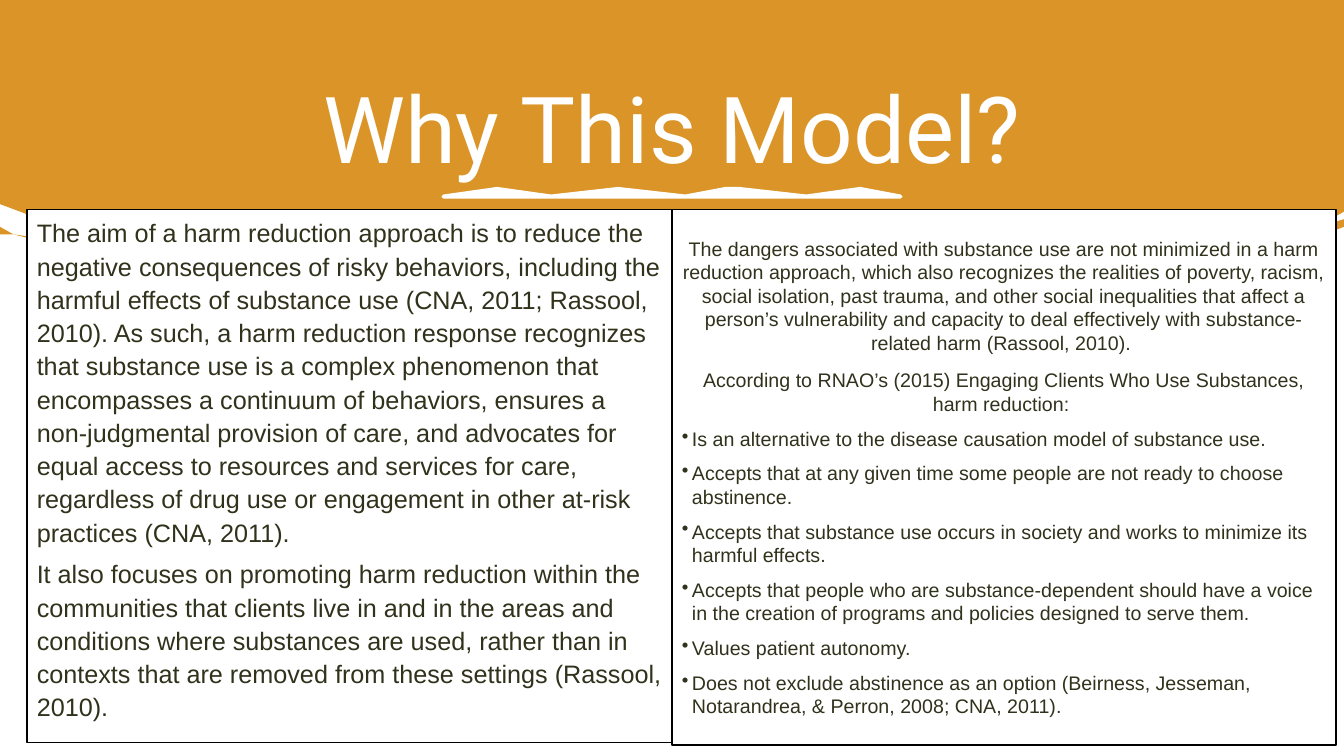
import pptx
import pptx.dml.color
import pptx.enum.shapes
import pptx.enum.text
import pptx.oxml.ns
import pptx.util
from dataclasses import dataclass
from lxml import etree

ALIGN = pptx.enum.text.PP_ALIGN
ANCHOR = pptx.enum.text.MSO_ANCHOR
RECTANGLE = pptx.enum.shapes.MSO_SHAPE.RECTANGLE
Pt = pptx.util.Pt


@dataclass(frozen=True)
class Theme:
    paper: str = "FFFFFF"
    banner: str = "DA9427"
    ink: str = "31321C"
    border: str = "000000"
    heading_font: str = "Roboto"
    body_font: str = "Arial"
    heading_size: int = 66
    aim_size: int = 18
    detail_size: int = 14


def assign(target, values):
    for name, value in values.items():
        setattr(target, name, value)


def rgb(colour):
    return pptx.dml.color.RGBColor.from_string(colour)


class Page:
    """A slide on a grid of 100 columns by 100 rows."""

    def __init__(self, deck, theme):
        self.theme = theme
        self.column = deck.slide_width / 100
        self.row = deck.slide_height / 100
        self.slide = deck.slides.add_slide(deck.slide_layouts[5])
        self.slide.background.fill.solid()
        self.slide.background.fill.fore_color.rgb = rgb(theme.paper)

    def box(self, left, top, width, height):
        return {"left": round(left * self.column), "top": round(top * self.row),
                "width": round(width * self.column), "height": round(height * self.row)}

    def paint(self, shape, fill, line=None, weight=1):
        shape.shadow.inherit = False
        shape.fill.solid()
        shape.fill.fore_color.rgb = rgb(fill)
        if line:
            shape.line.color.rgb = rgb(line)
            shape.line.width = Pt(weight)
        else:
            shape.line.fill.background()

    def outline(self, points, fill, line=None, weight=1):
        builder = self.slide.shapes.build_freeform(*points[0], scale=(self.column, self.row))
        builder.add_line_segments(points[1:], close=True)
        shape = builder.convert_to_shape()
        self.paint(shape, fill, line, weight)
        if line:
            edge = shape.element.spPr.find(pptx.oxml.ns.qn("a:ln"))
            etree.SubElement(edge, pptx.oxml.ns.qn("a:round"))

    def add_text(self, paragraph, text, size, font, colour, layout):
        assign(paragraph, layout)
        run = paragraph.add_run()
        run.text = text
        assign(run.font, {"size": Pt(size), "name": font})
        run.font.color.rgb = rgb(colour)

    def title(self, text, area):
        heading = self.slide.shapes.title
        assign(heading, self.box(*area))
        assign(heading.text_frame, {"vertical_anchor": ANCHOR.MIDDLE, "word_wrap": True})
        self.add_text(heading.text_frame.paragraphs[0], text, self.theme.heading_size,
                      self.theme.heading_font, self.theme.paper, {"alignment": ALIGN.CENTER})
        heading.element.getparent().append(heading.element)  # above the banner

    def panel(self, area, anchor, size, entries):
        """Each entry is (text, paragraph layout, bulleted)."""
        panel = self.slide.shapes.add_shape(RECTANGLE, **self.box(*area))
        self.paint(panel, self.theme.paper, self.theme.border)
        frame = panel.text_frame
        assign(frame, {"vertical_anchor": anchor, "word_wrap": True})
        for number, (text, layout, bulleted) in enumerate(entries):
            paragraph = frame.add_paragraph() if number else frame.paragraphs[0]
            self.add_text(paragraph, text, size, self.theme.body_font, self.theme.ink, layout)
            if bulleted:
                self.bullet(paragraph)

    def bullet(self, paragraph):
        hang = round(0.75 * self.column)
        properties = paragraph._p.get_or_add_pPr()
        properties.set("marL", str(hang))
        properties.set("indent", str(-hang))
        etree.SubElement(properties, pptx.oxml.ns.qn("a:buChar")).set("char", "•")


# Outlines, in columns and rows
BANNER = [
    (0, 0), (100, 0), (100, 27.87), (98.95, 28.53), (95.8, 30), (85.52, 34.13),
    (77.34, 36.67), (69.39, 38.67), (63.32, 39.87), (55.74, 40.93),
    # ribbon, upper edge on the right
    (62.19, 40.4), (70.74, 39.2), (77.79, 37.73), (87.17, 34.8), (98.42, 30.13), (100, 29.2),
    # ribbon, lower edge
    (100, 30), (97.07, 31.6), (89.72, 34.67), (81.92, 37.33), (75.39, 39.07),
    (64.52, 40.93), (53.11, 41.87), (49.66, 42), (43.21, 41.33), (35.63, 40.4),
    (27.68, 39.07), (19.35, 37.33), (10.13, 34.8), (0.53, 31.33), (0, 31.07),
    # ribbon, upper edge on the left
    (0, 30.13), (0.6, 30.53), (4.95, 32.13), (14.55, 35.2), (21.46, 36.93),
    (9.15, 32), (3.45, 29.07), (0, 27.07),
]
UNDERLINE = [
    (32.63, 25.6), (37.2, 25.45), (41.2, 25.5), (45.5, 25.35), (50.8, 25.6), (53.5, 25.3),
    (55.4, 25.4), (59.6, 25.6), (64, 25.3), (67.44, 25.5),
    (67.44, 25.87), (62.4, 25.8), (58.1, 25.95), (52.5, 25.8), (47.9, 25.9),
    (44, 26), (38.6, 25.9), (32.63, 25.87),
]

# Wording
AIM = [
    "The aim of a harm reduction approach is to reduce the negative consequences of risky "
    "behaviors, including the harmful effects of substance use (CNA, 2011; Rassool, 2010). As "
    "such, a harm reduction response recognizes that substance use is a complex phenomenon that "
    "encompasses a continuum of behaviors, ensures a non-judgmental provision of care, and "
    "advocates for equal access to resources and services for care, regardless of drug use or "
    "engagement in other at-risk practices (CNA, 2011).",
    "It also focuses on promoting harm reduction within the communities that clients live in and "
    "in the areas and conditions where substances are used, rather than in contexts that are "
    "removed from these settings (Rassool, 2010).",
]
CONTEXT = [
    "The dangers associated with substance use are not minimized in a harm reduction approach, "
    "which also recognizes the realities of poverty, racism, social isolation, past trauma, and "
    "other social inequalities that affect a person’s vulnerability and capacity to deal "
    "effectively with substance-related harm (Rassool, 2010). ",
    "According to RNAO’s (2015) Engaging Clients Who Use Substances, harm reduction: ",
]
PRINCIPLES = [
    "Is an alternative to the disease causation model of substance use.",
    "Accepts that at any given time some people are not ready to choose abstinence.",
    "Accepts that substance use occurs in society and works to minimize its harmful effects.",
    "Accepts that people who are substance-dependent should have a voice in the creation of "
    "programs and policies designed to serve them.",
    "Values patient autonomy.",
    "Does not exclude abstinence as an option (Beirness, Jesseman, Notarandrea, & Perron, 2008; "
    "CNA, 2011).",
]


def main():
    deck = pptx.Presentation()
    assign(deck, {"slide_width": pptx.util.Inches(13.33), "slide_height": pptx.util.Inches(7.5)})
    theme = Theme()
    page = Page(deck, theme)

    # Banner and title
    page.outline(BANNER, theme.banner)
    page.title("Why This Model?", (5.25, 5.73, 89.5, 22))

    # Context and principles
    lead = {"alignment": ALIGN.CENTER, "space_before": Pt(10)}
    item = {"alignment": ALIGN.LEFT, "space_before": Pt(8)}
    page.panel((50, 27.73, 49.4, 70.8), ANCHOR.MIDDLE, theme.detail_size,
               [(text, lead, False) for text in CONTEXT]
               + [(text, item, True) for text in PRINCIPLES])

    # Title underline
    page.outline(UNDERLINE, theme.paper, theme.paper, 3)

    # Aim of the approach
    prose = {"alignment": ALIGN.LEFT, "line_spacing": 1.1, "space_after": Pt(6)}
    page.panel((2, 27.73, 48, 70.5), ANCHOR.TOP, theme.aim_size,
               [(text, prose, False) for text in AIM])

    deck.save("out.pptx")


if __name__ == "__main__":
    main()
